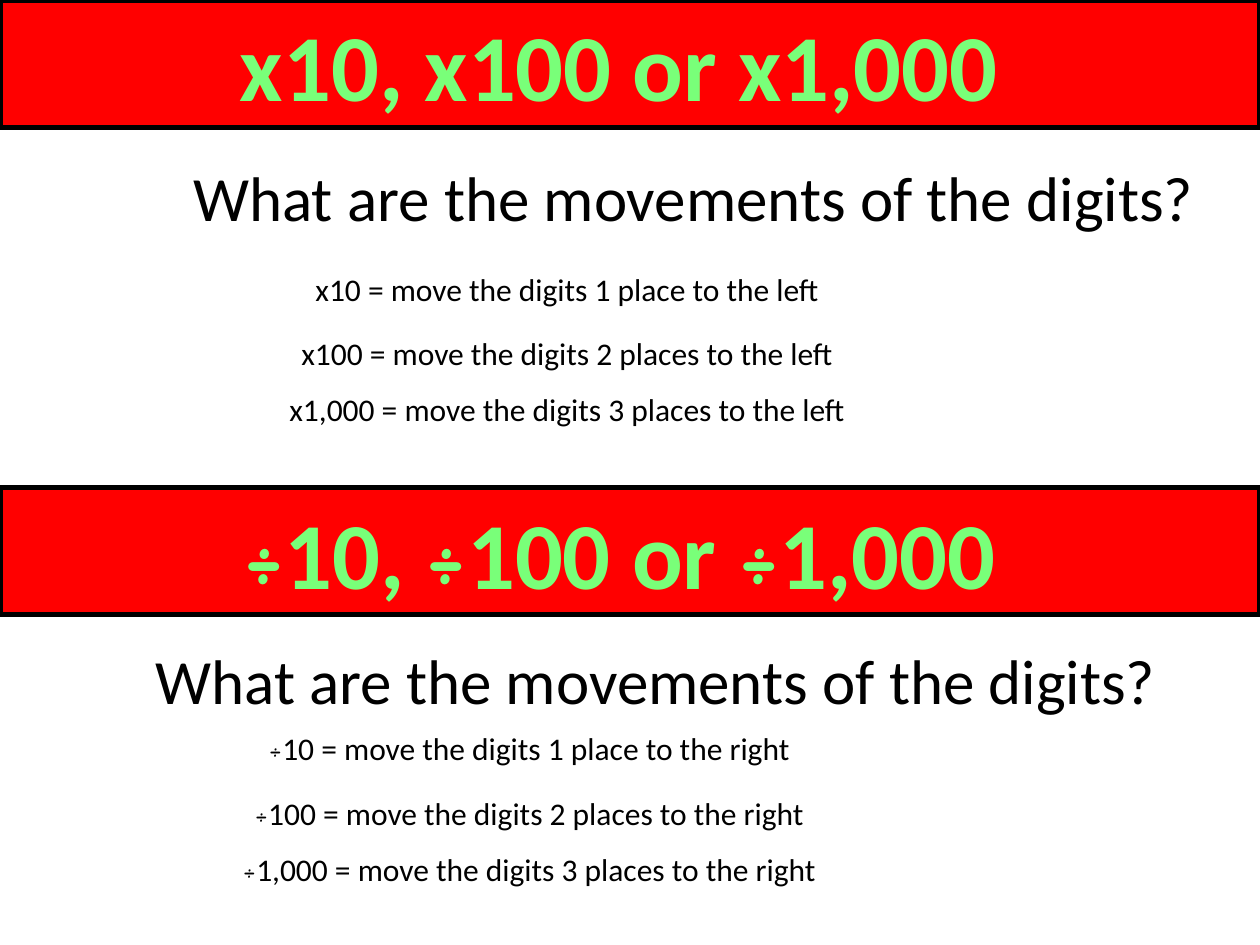
from dataclasses import dataclass

from lxml import etree
from pptx import Presentation
from pptx.dml.color import RGBColor
from pptx.enum.shapes import MSO_SHAPE
from pptx.enum.text import MSO_ANCHOR, MSO_AUTO_SIZE, PP_ALIGN
from pptx.oxml.ns import qn
from pptx.util import Inches, Pt

RECTANGLE = MSO_SHAPE.RECTANGLE
CENTER = PP_ALIGN.CENTER
MIDDLE = MSO_ANCHOR.MIDDLE
GROW = MSO_AUTO_SIZE.SHAPE_TO_FIT_TEXT

QUESTION = "What are the movements of the digits?"
SECTIONS = [
    {
        "title": "x10, x100 or x1,000 ",
        "rules": [
            "x10 = move the digits 1 place to the left ",
            "x100 = move the digits 2 places to the left ",
            "x1,000 = move the digits 3 places to the left ",
        ],
        "top": 0, "left": 1.01, "question_drop": 1.21, "rules_drop": 2.09,
    },
    {
        "title": "÷10, ÷100 or ÷1,000 ",
        "rules": [
            "÷10 = move the digits 1 place to the right ",
            "÷100 = move the digits 2 places to the right ",
            "÷1,000 = move the digits 3 places to the right ",
        ],
        "top": 3.87, "left": 0.71, "question_drop": 1.17, "rules_drop": 1.87,
    },
]

PAGE_WIDTH, PAGE_HEIGHT = 10, 7.5
BANNER_HEIGHT = 1.01
QUESTION_WIDTH, QUESTION_HEIGHT = 8.99, 0.71
RULE_WIDTH, RULE_HEIGHT = 7.04, 0.4
RULE_STEPS = (0, 0.51, 0.96)


@dataclass(frozen=True)
class Theme:
    banner: str = "FF0000"
    ink: str = "000000"
    title: str = "79FF79"
    title_edge: str = "4CA213"
    font: str = "Calibri"
    sign_font: str = "Comic Neue"
    title_size: int = 54
    question_size: int = 36
    rule_size: int = 18
    banner_line: int = 3
    title_edge_width: float = 2.48


THEME = Theme()


def rgb(value):
    return RGBColor.from_string(value)


def split_signs(text):
    """Separate each division sign from the text around it."""
    pieces = []
    for index, piece in enumerate(text.split("÷")):
        if index:
            pieces.append("÷")
        if piece:
            pieces.append(piece)
    return pieces


def outline(span):
    edge = etree.Element(qn("a:ln"), w=str(Pt(THEME.title_edge_width)))
    fill = etree.SubElement(edge, qn("a:solidFill"))
    etree.SubElement(fill, qn("a:srgbClr"), val=THEME.title_edge)
    span.font._element.insert(0, edge)


def write(box, text, size, color, title=False):
    frame = box.text_frame
    frame.word_wrap = True
    frame.auto_size = GROW
    para = frame.paragraphs[0]
    para.alignment = CENTER
    for piece in split_signs(text):
        span = para.add_run()
        span.text = piece
        span.font.name = THEME.sign_font if piece == "÷" else THEME.font
        span.font.size = Pt(size)
        span.font.color.rgb = rgb(color)
        if title:
            span.font.bold = True
            outline(span)


def add_banner(page, text, top):
    banner = page.shapes.add_shape(
        RECTANGLE, 0, Inches(top), Inches(PAGE_WIDTH), Inches(BANNER_HEIGHT))
    banner.shadow.inherit = False
    banner.fill.solid()
    banner.fill.fore_color.rgb = rgb(THEME.banner)
    banner.line.color.rgb = rgb(THEME.ink)
    banner.line.width = Pt(THEME.banner_line)
    banner.text_frame.vertical_anchor = MIDDLE
    write(banner, text, THEME.title_size, THEME.title, title=True)


def add_text(page, text, left, top, width, height, size):
    box = page.shapes.add_textbox(*map(Inches, (left, top, width, height)))
    write(box, text, size, THEME.ink)


def add_section(page, section):
    top, left = section["top"], section["left"]
    add_banner(page, section["title"], top)
    add_text(page, QUESTION, left, top + section["question_drop"],
             QUESTION_WIDTH, QUESTION_HEIGHT, THEME.question_size)
    for rule, step in zip(section["rules"], RULE_STEPS):
        add_text(page, rule, left, top + section["rules_drop"] + step,
                 RULE_WIDTH, RULE_HEIGHT, THEME.rule_size)


def main():
    deck = Presentation()
    deck.slide_width = Inches(PAGE_WIDTH)
    deck.slide_height = Inches(PAGE_HEIGHT)
    page = deck.slides.add_slide(deck.slide_layouts[6])
    for section in SECTIONS:
        add_section(page, section)
    deck.save("out.pptx")


if __name__ == "__main__":
    main()
